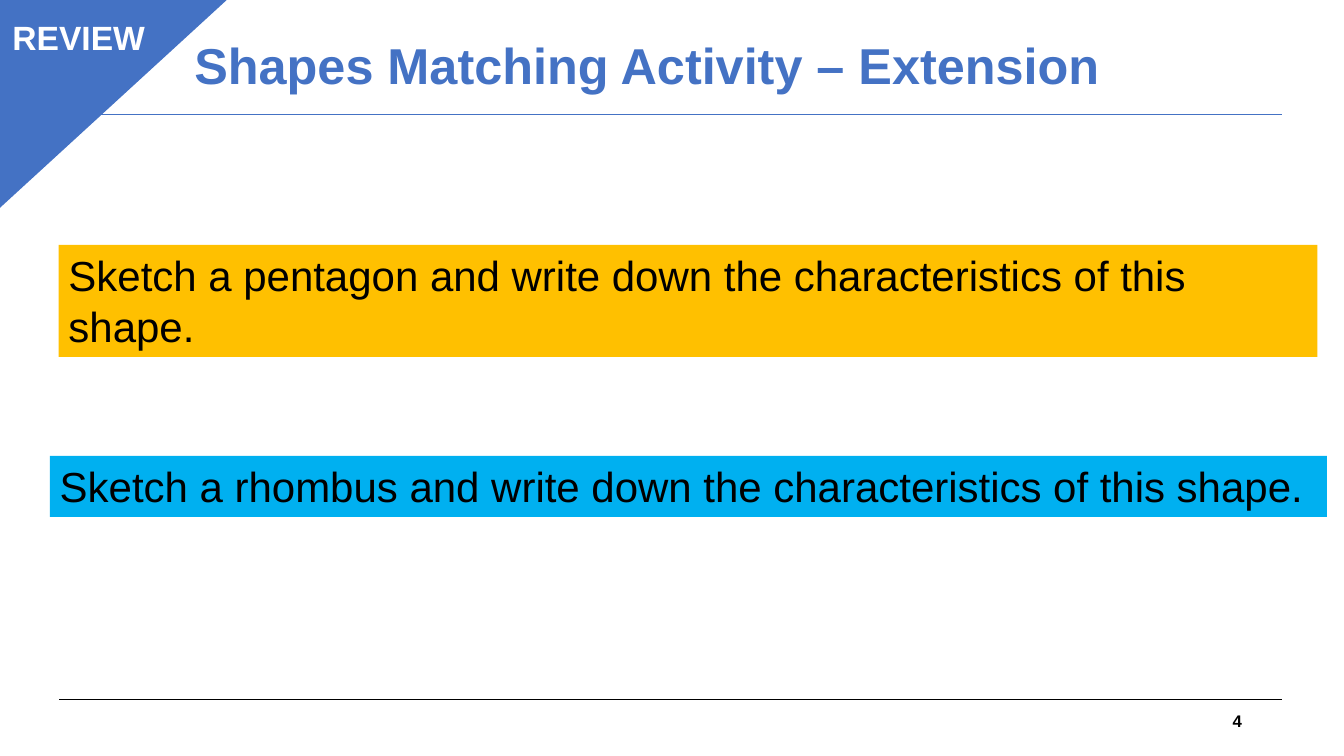
from dataclasses import dataclass

from lxml.etree import SubElement
from pptx import Presentation
from pptx.dml.color import RGBColor
from pptx.enum.shapes import MSO_CONNECTOR, MSO_SHAPE
from pptx.enum.text import MSO_ANCHOR, PP_ALIGN
from pptx.oxml.ns import qn
from pptx.util import Pt


@dataclass(frozen=True)
class Theme:
    font: str = "Arial"
    blue: str = "4472C4"
    sky: str = "00B0F0"
    gold: str = "FFC000"
    black: str = "000000"
    white: str = "FFFFFF"
    title: int = 36
    task: int = 30
    badge: int = 24
    number: int = 12


class Page:
    def __init__(self, slide, theme):
        self.shapes = slide.shapes
        self.theme = theme

    def rule(self, left, right, y, color):
        line = self.shapes.add_connector(
            MSO_CONNECTOR.STRAIGHT, Pt(left), Pt(y), Pt(right), Pt(y))
        line.line.color.rgb = RGBColor.from_string(color)
        line.line.width = Pt(0.75)
        SubElement(line._element.spPr, qn("a:effectLst"))

    def shape(self, kind, box, fill, edge=None):
        """Add a filled shape; edge is the outline width, if any."""
        shape = self.shapes.add_shape(kind, *map(Pt, box))
        shape.shadow.inherit = False
        shape.fill.solid()
        shape.fill.fore_color.rgb = RGBColor.from_string(fill)
        if edge:
            shape.line.color.rgb = RGBColor.from_string(fill)
            shape.line.width = Pt(edge)
        else:
            shape.line.fill.background()
        return shape

    def corner(self, box, fill):
        """Add a triangle with its right angle at the top left."""
        shape = self.shape(MSO_SHAPE.ISOSCELES_TRIANGLE, box, fill, 1)
        shape.adjustments[0] = 0
        shape._element.spPr.find(qn("a:xfrm")).set("flipV", "1")

    def set_text(self, shape, text, size, color, bold=False,
                 align=PP_ALIGN.LEFT, anchor=MSO_ANCHOR.TOP, space=1.0):
        frame = shape.text_frame
        frame.word_wrap = True
        frame.vertical_anchor = anchor
        para = frame.paragraphs[0]
        para.text = text
        para.alignment = align
        para.line_spacing = space
        font = para.font
        font.name = self.theme.font
        font.size = Pt(size)
        font.bold = bold
        font.color.rgb = RGBColor.from_string(color)

    def label(self, box, text, size, color, **style):
        shape = self.shapes.add_textbox(*map(Pt, box))
        self.set_text(shape, text, size, color, bold=True,
                      anchor=MSO_ANCHOR.MIDDLE, **style)

    def panel(self, box, fill, text, size, color, edge=None, **style):
        shape = self.shape(MSO_SHAPE.RECTANGLE, box, fill, edge)
        self.set_text(shape, text, size, color, **style)


def main():
    deck = Presentation()
    deck.slide_width, deck.slide_height = Pt(960), Pt(540)
    look = Theme()
    page = Page(deck.slides.add_slide(deck.slide_layouts[6]), look)

    for y, color in ((499.7, look.black), (82.1, look.blue)):
        page.rule(42.5, 915.8, y, color)

    page.label((131.8, 8.6, 720, 80), "Shapes Matching Activity – Extension",
               look.title, look.blue, space=0.9)
    page.label((678.2, 500.4, 216, 28.8), "4", look.number, look.black,
               align=PP_ALIGN.RIGHT)

    page.corner((-2.2, -1.4, 165, 151.2), look.blue)
    page.panel((0.7, 8.6, 111, 36), look.blue, "REVIEW", look.badge,
               look.white, edge=0.75, bold=True, align=PP_ALIGN.CENTER)

    tasks = (
        ("rhombus", look.sky, (35.6, 325.6, 912.2, 43.6)),
        ("pentagon", look.gold, (41.8, 175, 899.3, 80)),
    )
    for name, fill, box in tasks:
        text = f"Sketch a {name} and write down the characteristics of this shape."
        page.panel(box, fill, text, look.task, look.black)

    deck.save("out.pptx")


if __name__ == "__main__":
    main()
